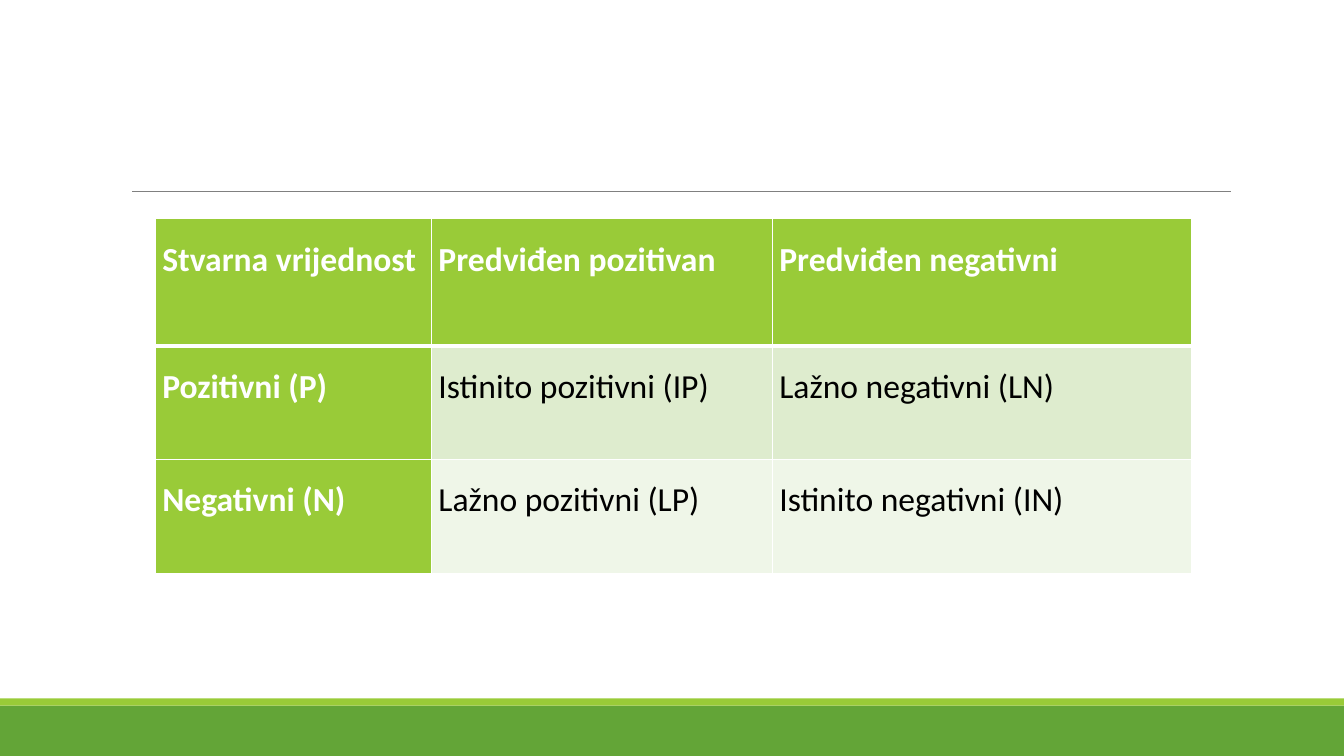
"""Builds a slide with a confusion matrix above a green footer band."""
from dataclasses import dataclass

import pptx
import pptx.dml.color
import pptx.enum.shapes
import pptx.oxml
import pptx.oxml.ns
import pptx.util
from pptx.util import Cm


@dataclass(frozen=True)
class Theme:
    font: str = "Calibri"
    text_size: float = 24
    paragraph_gap: float = 6
    leading: float = 1.5
    rule_width: float = 0.5
    grid_width: float = 1
    header_width: float = 3
    lime: str = "99CB38"
    green: str = "63A537"
    gray: str = "808080"
    white: str = "FFFFFF"
    black: str = "000000"
    bands: tuple = ("DEECCE", "EFF6E8")


THEME = Theme()
MATRIX = (
    ("Stvarna vrijednost", "Predviđen pozitivan", "Predviđen negativni"),
    ("Pozitivni (P)", "Istinito pozitivni (IP)", "Lažno negativni (LN)"),
    ("Negativni (N)", "Lažno pozitivni (LP)", "Istinito negativni (IN)"),
)
COLUMN_WIDTHS = (6.96, 8.59, 10.57)
ROW_HEIGHTS = (3.2, 2.87, 2.87)


def rgb(color):
    return pptx.dml.color.RGBColor.from_string(color)


def paint(target, color):
    target.fill.solid()
    target.fill.fore_color.rgb = rgb(color)


def add_band(slide, top, width, height, color):
    band = slide.shapes.add_shape(
        pptx.enum.shapes.MSO_SHAPE.RECTANGLE, 0, Cm(top), width, Cm(height))
    band.shadow.inherit = False
    paint(band, color)
    band.line.fill.background()


def add_rule(slide, left, right, y):
    rule = slide.shapes.add_connector(
        pptx.enum.shapes.MSO_CONNECTOR.STRAIGHT, Cm(left), Cm(y), Cm(right), Cm(y))
    rule.line.color.rgb = rgb(THEME.gray)
    rule.line.width = pptx.util.Pt(THEME.rule_width)
    properties = rule._element.spPr
    properties.append(properties.makeelement(pptx.oxml.ns.qn("a:effectLst"), {}))


def set_borders(cell, top, bottom):
    properties = cell._tc.get_or_add_tcPr()
    widths = {"L": THEME.grid_width, "R": THEME.grid_width, "T": top, "B": bottom}
    for position, (side, width) in enumerate(widths.items()):
        border = pptx.oxml.parse_xml(
            f'<a:ln{side} {pptx.oxml.ns.nsdecls("a")} w="{pptx.util.Pt(width)}">'
            f'<a:solidFill><a:srgbClr val="{THEME.white}"/></a:solidFill></a:ln{side}>')
        properties.insert(position, border)


def write_cell(cell, text, color, bold):
    cell.margin_left = cell.margin_right = Cm(0.18)
    cell.margin_top = cell.margin_bottom = 0
    paragraph = cell.text_frame.paragraphs[0]
    paragraph.line_spacing = THEME.leading
    paragraph.space_before = paragraph.space_after = pptx.util.Pt(THEME.paragraph_gap)
    run = paragraph.add_run()
    run.text = text
    run.font.name = THEME.font
    run.font.size = pptx.util.Pt(THEME.text_size)
    run.font.bold = bold
    run.font.color.rgb = rgb(color)


def add_matrix(slide, left, top):
    matrix = slide.shapes.add_table(
        len(ROW_HEIGHTS), len(COLUMN_WIDTHS), Cm(left), Cm(top),
        Cm(sum(COLUMN_WIDTHS)), Cm(sum(ROW_HEIGHTS))).table
    for column, width in zip(matrix.columns, COLUMN_WIDTHS):
        column.width = Cm(width)
    for row, height in zip(matrix.rows, ROW_HEIGHTS):
        row.height = Cm(height)
    for r, labels in enumerate(MATRIX):
        for c, label in enumerate(labels):
            cell = matrix.cell(r, c)
            heading = r == 0 or c == 0
            write_cell(cell, label, THEME.white if heading else THEME.black, heading)
            paint(cell, THEME.lime if heading else THEME.bands[r - 1])
            set_borders(cell,
                        top=THEME.header_width if r == 1 else THEME.grid_width,
                        bottom=THEME.header_width if r == 0 else THEME.grid_width)


def main():
    deck = pptx.Presentation()
    deck.slide_width, deck.slide_height = Cm(33.87), Cm(19.05)
    slide = deck.slides.add_slide(deck.slide_layouts[6])
    add_band(slide, 17.78, deck.slide_width, 1.27, THEME.green)
    add_band(slide, 17.6, deck.slide_width, 0.18, THEME.lime)
    add_rule(slide, 3.33, 31.01, 4.83)
    add_matrix(slide, 3.91, 5.51)
    deck.save("out.pptx")


if __name__ == "__main__":
    main()
